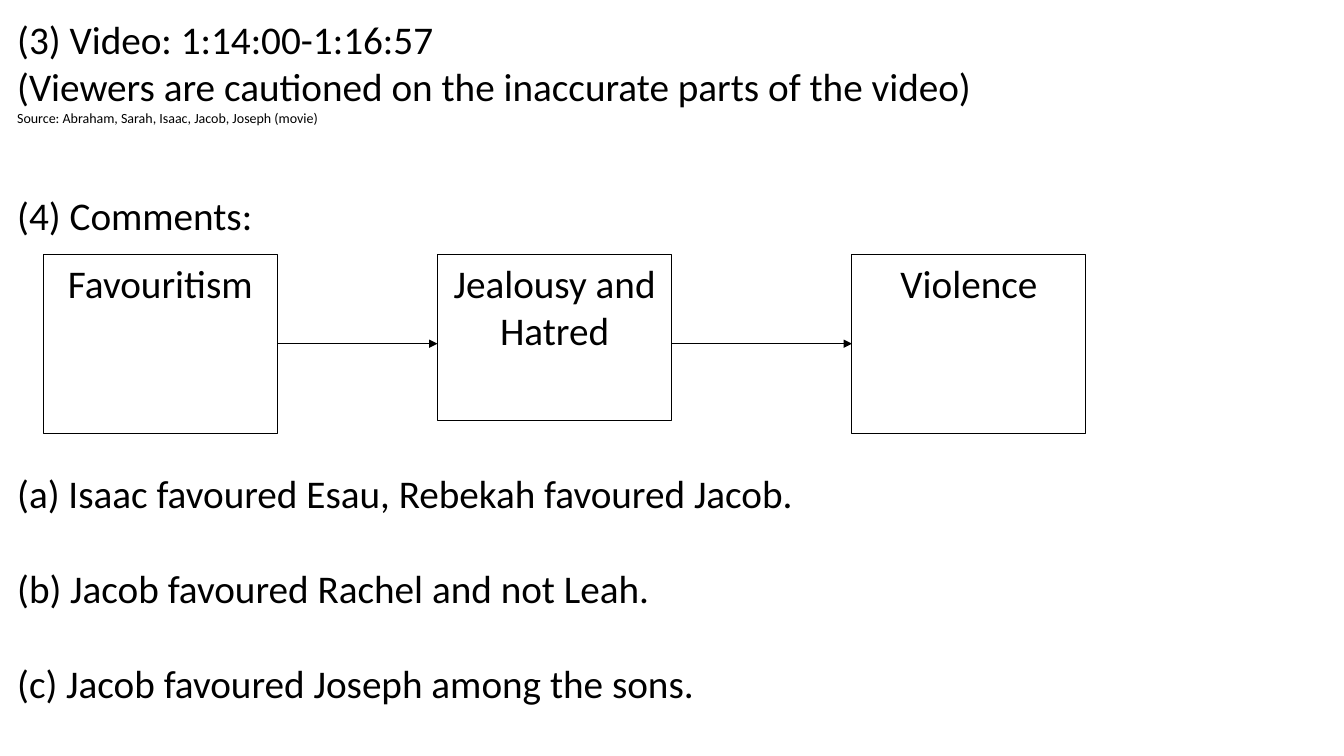
"""Build the slide on favouritism in the families of Isaac and Jacob."""
import pptx
import pptx.dml.color
import pptx.enum.shapes
import pptx.enum.text
import pptx.oxml
import pptx.oxml.ns
import pptx.util

Inches, Pt = pptx.util.Inches, pptx.util.Pt
PP_ALIGN = pptx.enum.text.PP_ALIGN
THEME = {
    "font": "Calibri",
    "ink": pptx.dml.color.RGBColor(0, 0, 0),
    "text": Pt(28),
    "source": Pt(10),
    "box_line": Pt(0.75),
    "arrow_line": Pt(0.5),
}


def place(shape, left, top, width, height):
    shape.left, shape.top = Inches(left), Inches(top)
    shape.width, shape.height = Inches(width), Inches(height)


def write(shape, lines, alignment):
    frame = shape.text_frame
    frame.word_wrap = True
    frame.auto_size = pptx.enum.text.MSO_AUTO_SIZE.NONE
    frame.vertical_anchor = pptx.enum.text.MSO_ANCHOR.TOP
    for index, (text, size, gap) in enumerate(lines):
        paragraph = frame.paragraphs[0] if index == 0 else frame.add_paragraph()
        paragraph.alignment = alignment
        paragraph.space_before = Pt(gap)
        run = paragraph.add_run()
        run.text = text
        run.font.name = THEME["font"]
        run.font.size = THEME[size]
        run.font.color.rgb = THEME["ink"]


presentation = pptx.Presentation()
presentation.slide_width = Inches(13.33)
presentation.slide_height = Inches(7.5)
slide = presentation.slides.add_slide(presentation.slide_layouts[1])
title, body = slide.placeholders

place(title, 0.07, 0.1, 13.33, 2.32)
write(title, [
    ("(3) Video: 1:14:00-1:16:57", "text", 0),
    ("(Viewers are cautioned on the inaccurate parts of the video)", "text", 0),
    ("Source: Abraham, Sarah, Isaac, Jacob, Joseph (movie)", "source", 0),
    ("(4) Comments:", "text", 46.4),
], PP_ALIGN.LEFT)

boxes = []
for label, left, height in [
    ("Favouritism", 0.43, 1.78),
    ("Jealousy and Hatred", 4.34, 1.65),
    ("Violence", 8.45, 1.78),
]:
    box = slide.shapes.add_shape(
        pptx.enum.shapes.MSO_SHAPE.RECTANGLE,
        Inches(left), Inches(2.52), Inches(2.32), Inches(height))
    box.shadow.inherit = False
    box.fill.background()
    box.line.color.rgb = THEME["ink"]
    box.line.width = THEME["box_line"]
    write(box, [(label, "text", 0)], PP_ALIGN.CENTER)
    boxes.append(box)

favouritism, jealousy, violence = boxes
arrow_y = favouritism.top + favouritism.height // 2
arrows = []
for cause, effect in [(favouritism, jealousy), (jealousy, violence)]:
    arrow = slide.shapes.add_connector(
        pptx.enum.shapes.MSO_CONNECTOR.STRAIGHT,
        cause.left + cause.width, arrow_y, effect.left, arrow_y)
    arrow.line.color.rgb = THEME["ink"]
    arrow.line.width = THEME["arrow_line"]
    tail = pptx.oxml.parse_xml(
        f'<a:tailEnd {pptx.oxml.ns.nsdecls("a")} type="triangle"/>')
    arrow.line._get_or_add_ln().append(tail)
    properties = arrow._element.spPr
    properties.append(pptx.oxml.parse_xml(
        f'<a:effectLst {pptx.oxml.ns.nsdecls("a")}/>'))
    arrows.append(arrow)
arrows[0].begin_connect(favouritism, 3)
arrows[1].end_connect(violence, 1)

place(body, 0.07, 4.61, 12.85, 2.46)
write(body, [
    (" Isaac favoured Esau, Rebekah favoured Jacob.", "text", 0),
    (" Jacob favoured Rachel and not Leah.", "text", 34),
    (" Jacob favoured Joseph among the sons.", "text", 34),
], PP_ALIGN.LEFT)
for paragraph in body.text_frame.paragraphs:
    properties = paragraph._p.get_or_add_pPr()
    properties.set("marL", str(Inches(0.38)))
    properties.set("indent", str(-Inches(0.38)))
    properties.append(pptx.oxml.parse_xml(
        f'<a:buFont {pptx.oxml.ns.nsdecls("a")} typeface="{THEME["font"]}"/>'))
    properties.append(pptx.oxml.parse_xml(
        f'<a:buAutoNum {pptx.oxml.ns.nsdecls("a")} type="alphaLcParenBoth"/>'))

presentation.save("out.pptx")
